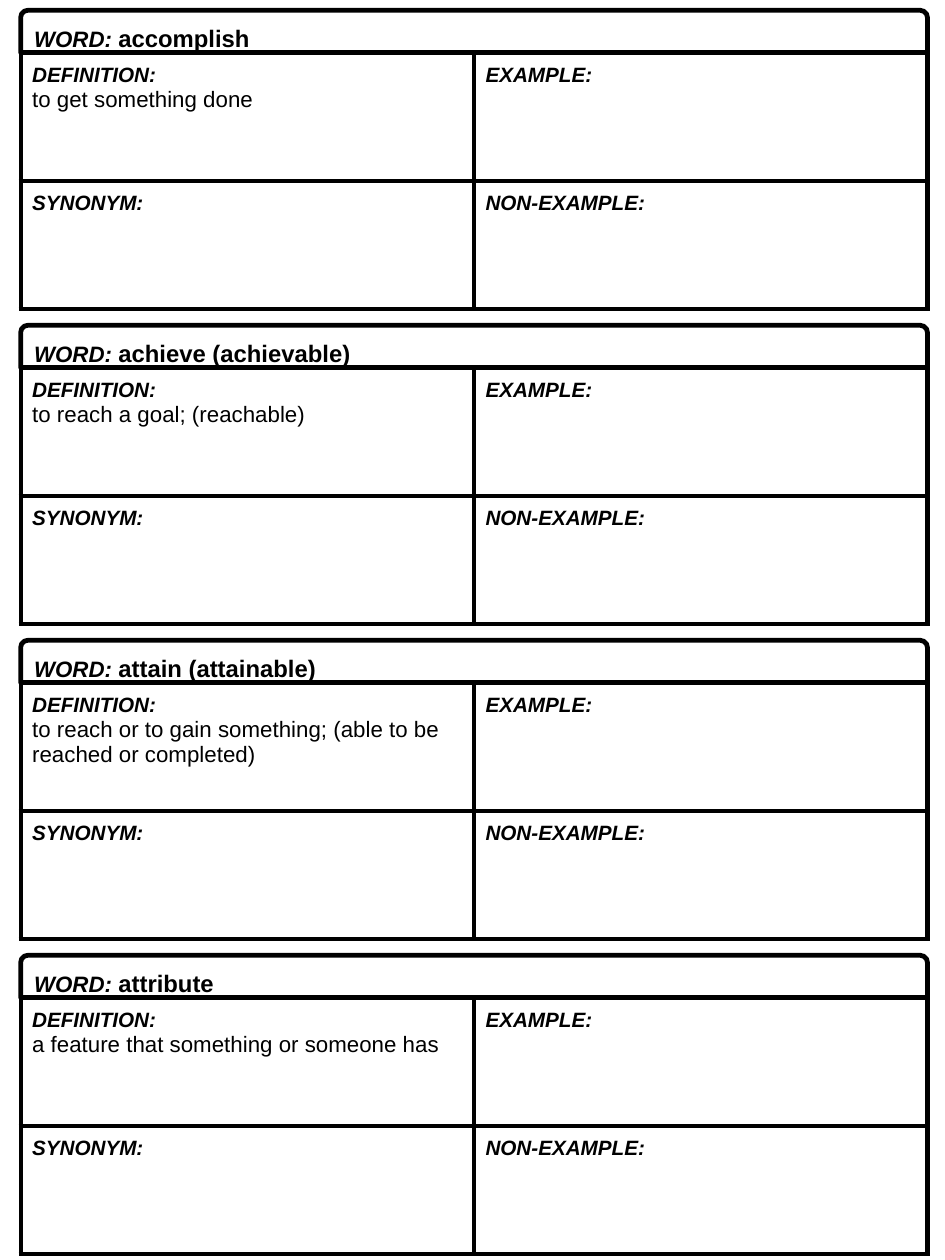
"""Builds a vocabulary page with four word cards."""
from lxml.etree import SubElement
from pptx import Presentation
from pptx.dml.color import RGBColor
from pptx.enum.shapes import MSO_SHAPE as Shape
from pptx.enum.text import MSO_ANCHOR as Anchor, PP_ALIGN as Align
from pptx.oxml.ns import qn
from pptx.util import Pt

COLORS = {"ink": "000000", "paper": "FFFFFF"}
FONT = "Arial"
BORDER = 3
INSET = 7.2
LEFT, TOP, PITCH = 13, 6.5, 198
WIDTH, HEADER_HEIGHT, ROW_HEIGHT = 570, 26.5, 80.6

WORDS = [
    ("accomplish", "to get something done"),
    ("achieve (achievable)", "to reach a goal; (reachable)"),
    ("attain (attainable)",
     "to reach or to gain something; (able to be reached or completed)"),
    ("attribute", "a feature that something or someone has"),
]
PROMPTS = [["DEFINITION:", "EXAMPLE:"], ["SYNONYM:", "NON-EXAMPLE:"]]


def add_span(para, text, size=13, bold=True, italic=True, underline=None):
    """Append formatted text to a paragraph."""
    span = para.add_run()
    span.text = text
    font = span.font
    font.name, font.size = FONT, Pt(size)
    font.bold, font.italic, font.underline = bold, italic, underline
    font.color.rgb = RGBColor.from_string(COLORS["ink"])


def set_margins(holder):
    """Give a cell or text frame equal insets."""
    for side in ("left", "right", "top", "bottom"):
        setattr(holder, f"margin_{side}", Pt(INSET))


class CardPage:
    """Holds the card style and the current slide."""

    def __init__(self, deck):
        """Start a blank page."""
        self.slide = deck.slides.add_slide(deck.slide_layouts[6])

    def header(self, word, top):
        """Draw the rounded strip that names the word."""
        box = self.slide.shapes.add_shape(
            Shape.ROUND_2_SAME_RECTANGLE,
            Pt(LEFT), Pt(top), Pt(WIDTH), Pt(HEADER_HEIGHT))
        box.adjustments[0], box.adjustments[1] = 0.17, 0
        box.shadow.inherit = False
        box.fill.solid()
        box.fill.fore_color.rgb = RGBColor.from_string(COLORS["paper"])
        box.line.color.rgb = RGBColor.from_string(COLORS["ink"])
        box.line.width = Pt(BORDER)
        frame = box.text_frame
        frame.word_wrap = True
        frame.vertical_anchor = Anchor.TOP
        set_margins(frame)
        para = frame.paragraphs[0]
        para.alignment = Align.LEFT
        add_span(para, "WORD: ", size=14)
        add_span(para, word, size=15, italic=False, underline=True)

    def border(self, cell):
        """Outline all four sides of a cell and leave it unfilled."""
        props = cell._tc.get_or_add_tcPr()
        for side in ("lnL", "lnR", "lnT", "lnB"):
            line = SubElement(props, qn(f"a:{side}"), w=str(Pt(BORDER)))
            fill = SubElement(line, qn("a:solidFill"))
            SubElement(fill, qn("a:srgbClr"), val=COLORS["ink"])
        cell.fill.background()

    def grid(self, definition, top):
        """Draw the two-by-two table of prompts."""
        table = self.slide.shapes.add_table(
            2, 2, Pt(LEFT), Pt(top), Pt(WIDTH), Pt(2 * ROW_HEIGHT)).table
        table.first_row = table.horz_banding = False
        for row, prompts in enumerate(PROMPTS):
            for column, prompt in enumerate(prompts):
                cell = table.cell(row, column)
                set_margins(cell)
                self.border(cell)
                add_span(cell.text_frame.paragraphs[0], prompt)
        para = table.cell(0, 0).text_frame.add_paragraph()
        add_span(para, definition, size=14, bold=False, italic=False)

    def card(self, word, definition, top):
        """Draw one complete word card."""
        self.grid(definition, top + HEADER_HEIGHT)
        self.header(word, top)


def main():
    """Build and save the deck."""
    deck = Presentation()
    deck.slide_width, deck.slide_height = Pt(594), Pt(792)
    page = CardPage(deck)
    for index, (word, definition) in enumerate(WORDS):
        page.card(word, definition, TOP + index * PITCH)
    deck.save("out.pptx")


if __name__ == "__main__":
    main()
